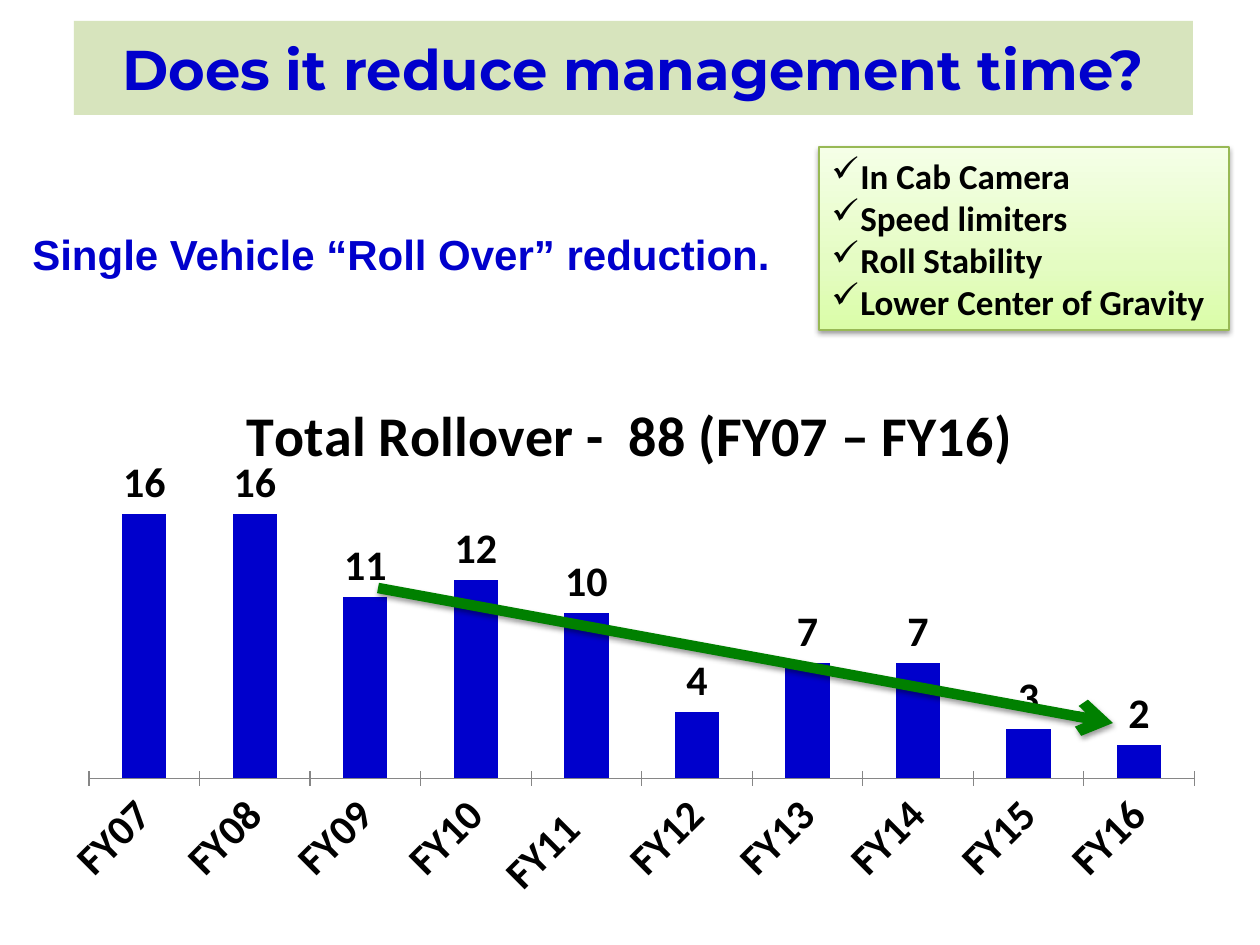
"""Build the rollover reduction slide with a chart, a trend arrow and a checklist."""
from dataclasses import dataclass

from lxml.etree import SubElement
from pptx import Presentation
from pptx.chart.data import CategoryChartData
from pptx.dml.color import RGBColor
from pptx.enum.chart import XL_CHART_TYPE, XL_LABEL_POSITION, XL_TICK_LABEL_POSITION, XL_TICK_MARK
from pptx.enum.shapes import MSO_CONNECTOR, MSO_SHAPE
from pptx.enum.text import MSO_ANCHOR, PP_ALIGN
from pptx.oxml import parse_xml
from pptx.oxml.ns import nsdecls, qn
from pptx.util import Emu, Pt

PX_PER_INCH = 126
BLUE, GREEN, BLACK = "0000CC", "008000", "000000"


@dataclass(frozen=True)
class Box:
    left: int
    top: int
    width: int
    height: int

    def emu(self) -> tuple:
        return px(self.left), px(self.top), px(self.width), px(self.height)


@dataclass(frozen=True)
class Year:
    label: str
    rollovers: int


YEARS = [
    Year("FY07", 16), Year("FY08", 16), Year("FY09", 11), Year("FY10", 12),
    Year("FY11  ", 10), Year("FY12", 4), Year("FY13", 7), Year("FY14", 7),
    Year("FY15", 3), Year("FY16", 2),
]
MEASURES = ["In Cab Camera", "Speed limiters", "Roll Stability", "Lower Center of Gravity"]


def px(length: int) -> Emu:
    return Emu(round(length * 914400 / PX_PER_INCH))


def color(value: str) -> RGBColor:
    return RGBColor.from_string(value)


def style_font(font, size: int, name: str = "Calibri", ink: str = BLACK) -> None:
    font.size, font.name, font.bold = Pt(size), name, True
    font.color.rgb = color(ink)


def add_check(paragraph, indent: int) -> None:
    properties = paragraph._p.get_or_add_pPr()
    properties.set("marL", str(px(indent)))
    properties.set("indent", str(-px(indent)))
    SubElement(properties, qn("a:buChar")).set("char", "✓")


def add_text(slide, box: Box, text: str, *, size: int, name: str = "Calibri",
             ink: str = BLACK, align=PP_ALIGN.LEFT, fill: str = "", check_indent: int = 0):
    panel = slide.shapes.add_shape(MSO_SHAPE.RECTANGLE, *box.emu())
    panel.shadow.inherit = False
    panel.line.fill.background()
    if fill:
        panel.fill.solid()
        panel.fill.fore_color.rgb = color(fill)
    else:
        panel.fill.background()
    frame = panel.text_frame
    frame.word_wrap = True
    frame.vertical_anchor = MSO_ANCHOR.MIDDLE
    frame.margin_top = frame.margin_bottom = px(6)
    for index, line in enumerate(text.split("\n")):
        paragraph = frame.add_paragraph() if index else frame.paragraphs[0]
        paragraph.alignment = align
        if check_indent:
            add_check(paragraph, check_indent)
        run = paragraph.add_run()
        run.text = line
        style_font(run.font, size, name, ink)
    return panel


def add_shadow(properties) -> None:
    for effects in properties.findall(qn("a:effectLst")):
        properties.remove(effects)
    properties.append(parse_xml(
        f'<a:effectLst {nsdecls("a")}><a:outerShdw blurRad="{Pt(3.1)}" dist="{Pt(1.6)}" '
        'dir="5400000" rotWithShape="0"><a:srgbClr val="000000"><a:alpha val="38000"/>'
        '</a:srgbClr></a:outerShdw></a:effectLst>'))


def add_gradient(properties, stops: list[tuple[int, str]]) -> None:
    marks = "".join(f'<a:gs pos="{percent * 1000}"><a:srgbClr val="{tint}"/></a:gs>'
                    for percent, tint in stops)
    flat = properties.find(qn("a:solidFill"))
    properties.replace(flat, parse_xml(
        f'<a:gradFill {nsdecls("a")} rotWithShape="1"><a:gsLst>{marks}</a:gsLst>'
        '<a:lin ang="16200000" scaled="0"/></a:gradFill>'))


def place_plot(chart, **fractions: float) -> None:
    parts = "".join(f'<c:{key} val="{value}"/>' for key, value in fractions.items())
    plot_area = chart._chartSpace.chart.plotArea
    for layout in plot_area.findall(qn("c:layout")):
        plot_area.remove(layout)
    plot_area.insert(0, parse_xml(
        f'<c:layout {nsdecls("c")}><c:manualLayout><c:layoutTarget val="inner"/>'
        f'<c:xMode val="edge"/><c:yMode val="edge"/>{parts}</c:manualLayout></c:layout>'))


def add_rollover_chart(slide, box: Box, years: list[Year]) -> None:
    data = CategoryChartData()
    data.categories = [year.label for year in years]
    data.add_series("Series 1", [year.rollovers for year in years])
    chart = slide.shapes.add_chart(XL_CHART_TYPE.COLUMN_CLUSTERED, *box.emu(), data).chart
    style_font(chart.font, 18)
    chart.has_legend = False
    chart.has_title = True
    heading = chart.chart_title.text_frame.paragraphs[0].add_run()
    heading.text = "Total Rollover -  88 (FY07 – FY16)"
    style_font(heading.font, 32)
    chart.chart_title.include_in_layout = False

    counts = chart.value_axis
    counts.visible = False
    counts.has_major_gridlines = False
    counts.minimum_scale, counts.maximum_scale = 0, 18
    fiscal_years = chart.category_axis
    fiscal_years.major_tick_mark = XL_TICK_MARK.CROSS
    fiscal_years.tick_label_position = XL_TICK_LABEL_POSITION.LOW
    fiscal_years.format.line.color.rgb = color("868686")
    style_font(fiscal_years.tick_labels.font, 24)
    fiscal_years._element.txPr.find(qn("a:bodyPr")).set("rot", "-2700000")

    plot = chart.plots[0]
    plot.gap_width = 150
    plot.vary_by_categories = False
    plot.has_data_labels = True
    plot.data_labels.show_value = True
    plot.data_labels.position = XL_LABEL_POSITION.OUTSIDE_END
    style_font(plot.data_labels.font, 24)
    bars = plot.series[0]
    bars.invert_if_negative = False
    bars.format.fill.solid()
    bars.format.fill.fore_color.rgb = color(BLUE)
    place_plot(chart, x=0.04, y=0.21, w=0.94, h=0.55)


def add_trend_arrow(slide, start: tuple[int, int], end: tuple[int, int]) -> None:
    trend = slide.shapes.add_connector(
        MSO_CONNECTOR.STRAIGHT, *(px(length) for length in start + end))
    trend.line.color.rgb = color(GREEN)
    trend.line.width = Pt(6)
    SubElement(trend.line._get_or_add_ln(), qn("a:tailEnd")).set("type", "arrow")
    add_shadow(trend._element.spPr)


def main() -> None:
    deck = Presentation()
    deck.slide_width, deck.slide_height = px(1260), px(945)
    slide = deck.slides.add_slide(deck.slide_layouts[6])
    add_rollover_chart(slide, Box(42, 368, 1176, 540), YEARS)
    add_text(slide, Box(74, 21, 1119, 94), "Does it reduce management time?", size=32,
             name="Montserrat", ink=BLUE, align=PP_ALIGN.CENTER, fill="D7E4BD")
    add_text(slide, Box(20, 221, 780, 66), "Single Vehicle “Roll Over” reduction.",
             size=24, name="Arial", ink=BLUE)
    add_trend_arrow(slide, (378, 588), (1113, 723))
    checklist = add_text(slide, Box(819, 147, 410, 183), "\n".join(MEASURES), size=20,
                         fill="E4FCC2", check_indent=29)
    checklist.line.color.rgb = color("98B955")
    checklist.line.width = Pt(0.75)
    add_gradient(checklist._element.spPr, [(0, "DAFDA7"), (35, "E4FCC2"), (100, "F5FFE7")])
    add_shadow(checklist._element.spPr)
    deck.save("out.pptx")


if __name__ == "__main__":
    main()
